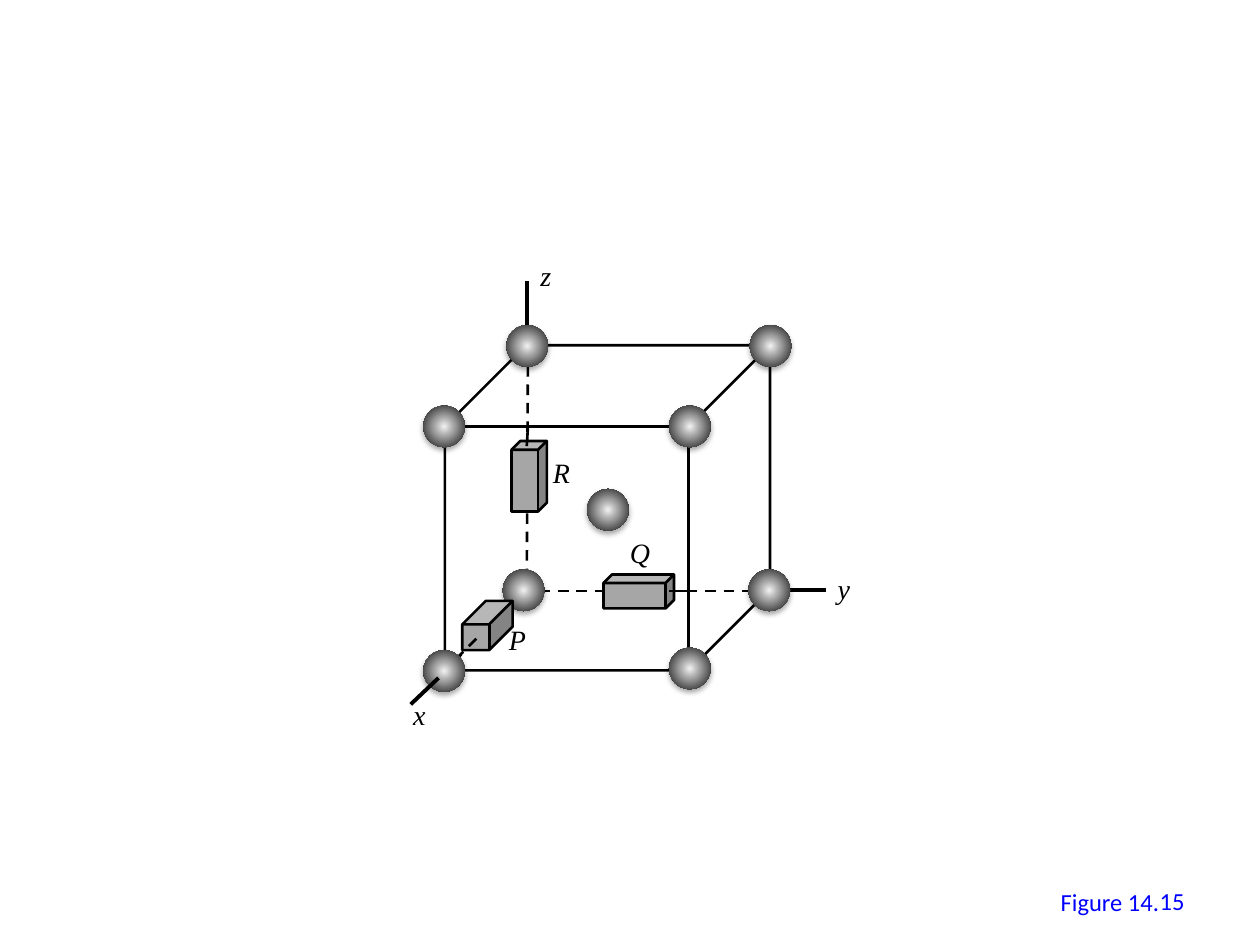
from dataclasses import dataclass

import pptx
import pptx.dml.color
import pptx.enum.dml
import pptx.enum.shapes
import pptx.enum.text
import pptx.oxml
import pptx.oxml.ns
import pptx.util
from pptx.util import Pt

SHAPES = pptx.enum.shapes.MSO_SHAPE
ALIGN = pptx.enum.text.PP_ALIGN
RGB = pptx.dml.color.RGBColor
NS = pptx.oxml.ns.nsdecls("a")


@dataclass(frozen=True)
class Theme:
    ink: RGB = RGB(0, 0, 0)
    rod: RGB = RGB(0xA6, 0xA6, 0xA6)
    atom_light: RGB = RGB(0xF2, 0xF2, 0xF2)
    atom_dark: RGB = RGB(0x0D, 0x0D, 0x0D)
    caption: RGB = RGB(0, 0, 0xFF)
    label_font: str = "Times New Roman"
    caption_font: str = "Calibri"
    label_size: float = 16
    caption_size: float = 14
    edge: float = 1.5
    axis: float = 2.25
    atom_size: float = 23.8


@dataclass(frozen=True)
class Box:
    left: float
    top: float
    width: float
    height: float
    depth: float = 0.25

    def lengths(self) -> tuple:
        return Pt(self.left), Pt(self.top), Pt(self.width), Pt(self.height)


@dataclass(frozen=True)
class Segment:
    x1: float
    y1: float
    x2: float
    y2: float
    weight: float
    dashed: bool = False


@dataclass(frozen=True)
class Atom:
    left: float
    top: float


@dataclass(frozen=True)
class Label:
    text: str
    left: float
    top: float
    width: float


THEME = Theme()
CELL = Box(254.2, 197.3, 185.8, 185.8)

# Everything in the unit cell, from back to front
PARTS = [
    Segment(301.7, 198.7, 301, 339.1, THEME.edge, True),
    Segment(440.6, 337.7, 299.5, 337.7, THEME.edge, True),
    Segment(301.7, 337.7, 254.9, 382.3, THEME.edge, True),
    Atom(428.4, 185.8),
    Atom(335.5, 279.4),
    Atom(241.9, 231.8),
    Atom(382.3, 370.1),
    Atom(382.3, 231.8),
    Box(344.9, 328.3, 40.3, 19.4),
    Box(292.3, 252, 20.2, 40.3),
    Atom(287.3, 325.4),
    Segment(472.3, 337, 443.5, 337, THEME.axis),
    Segment(301, 160.6, 301, 189.4, THEME.axis),
    Atom(427.7, 325.4),
    Atom(289.4, 185.8),
    Label("y", 471.6, 323.3, 25.9),
    Label("z", 301.7, 144, 25.2),
    Label("P", 283.7, 352.1, 28.8),
    Label("Q", 352.8, 302.4, 30.2),
    Label("R", 308.9, 257, 28.8),
    Segment(382.3, 337.7, 392.4, 337.7, THEME.edge),
    Segment(301, 254.9, 301.7, 244.1, THEME.edge),
    Box(264.2, 343.4, 28.8, 28.1, 0.477),
    Segment(272.2, 365, 257, 380.2, THEME.edge, True),
    Atom(241.9, 371.5),
    Segment(250.6, 387.4, 234.7, 402.5, THEME.axis),
    Label("x", 229, 395.3, 25.9),
]


def draw_cube(slide: pptx.slide.Slide, box: Box, filled: bool = True) -> None:
    cube = slide.shapes.add_shape(SHAPES.CUBE, *box.lengths())
    cube.shadow.inherit = False
    cube.adjustments[0] = box.depth
    if filled:
        cube.fill.solid()
        cube.fill.fore_color.rgb = THEME.rod
    else:
        cube.fill.background()
    cube.line.color.rgb = THEME.ink
    cube.line.width = Pt(THEME.edge)


def draw_segment(slide: pptx.slide.Slide, segment: Segment) -> None:
    line = slide.shapes.add_connector(
        pptx.enum.shapes.MSO_CONNECTOR.STRAIGHT,
        Pt(segment.x1), Pt(segment.y1), Pt(segment.x2), Pt(segment.y2))
    line.line.color.rgb = THEME.ink
    line.line.width = Pt(segment.weight)
    if segment.dashed:
        line.line.dash_style = pptx.enum.dml.MSO_LINE.DASH
    line._element.spPr.append(pptx.oxml.parse_xml(f"<a:effectLst {NS}/>"))


def draw_atom(slide: pptx.slide.Slide, atom: Atom) -> None:
    """Draw a ball with a radial gradient and a soft shadow below it."""
    size = Pt(THEME.atom_size)
    ball = slide.shapes.add_shape(
        SHAPES.OVAL, Pt(atom.left), Pt(atom.top), size, size)
    ball.line.fill.background()
    ball.fill.gradient()
    shades = ((0, THEME.atom_light), (0.99, THEME.atom_dark))
    for stop, (position, color) in zip(ball.fill.gradient_stops, shades):
        stop.position = position
        stop.color.rgb = color
    gradient = ball._element.spPr.find(pptx.oxml.ns.qn("a:gradFill"))
    gradient.remove(gradient.find(pptx.oxml.ns.qn("a:lin")))
    gradient.append(pptx.oxml.parse_xml(
        f'<a:path {NS} path="circle">'
        '<a:fillToRect l="50000" t="50000" r="50000" b="50000"/></a:path>'))
    ball.shadow.inherit = False
    effects = ball._element.spPr.find(pptx.oxml.ns.qn("a:effectLst"))
    effects.append(pptx.oxml.parse_xml(
        f'<a:outerShdw {NS} blurRad="{Pt(3.1)}" dist="{Pt(1.8)}" '
        'dir="5400000" rotWithShape="0"><a:srgbClr val="000000">'
        '<a:alpha val="35000"/></a:srgbClr></a:outerShdw>'))


def add_text(slide: pptx.slide.Slide, text: str, box: Box, font_name: str,
             size: float, color: RGB, italic: bool = False):
    """Add a one-line text box that grows with its text; return its frame."""
    frame = slide.shapes.add_textbox(*box.lengths()).text_frame
    frame.word_wrap = False
    frame.auto_size = pptx.enum.text.MSO_AUTO_SIZE.SHAPE_TO_FIT_TEXT
    run = frame.paragraphs[0].add_run()
    run.text = text
    run.font.name = font_name
    run.font.size = Pt(size)
    run.font.color.rgb = color
    run.font.italic = italic
    return frame


def draw_label(slide: pptx.slide.Slide, label: Label) -> None:
    add_text(slide, label.text, Box(label.left, label.top, label.width, 26.6),
             THEME.label_font, THEME.label_size, THEME.ink, italic=True)


def draw_caption(slide: pptx.slide.Slide) -> None:
    style = THEME.caption_font, THEME.caption_size, THEME.caption
    add_text(slide, "Figure 14.", Box(599, 503.3, 71.3, 24.5), *style)
    number = add_text(slide, "15", Box(516.2, 500.4, 167.8, 28.8), *style)
    number.word_wrap = True
    number.auto_size = pptx.enum.text.MSO_AUTO_SIZE.NONE
    number.vertical_anchor = pptx.enum.text.MSO_ANCHOR.MIDDLE
    number.paragraphs[0].alignment = ALIGN.RIGHT


def main() -> None:
    deck = pptx.Presentation()
    deck.slide_width, deck.slide_height = Pt(720), Pt(540)
    slide = deck.slides.add_slide(deck.slide_layouts[6])
    painters = {Segment: draw_segment, Atom: draw_atom,
                Box: draw_cube, Label: draw_label}
    draw_cube(slide, CELL, filled=False)
    for part in PARTS:
        painters[type(part)](slide, part)
    draw_caption(slide)
    deck.save("out.pptx")


if __name__ == "__main__":
    main()
